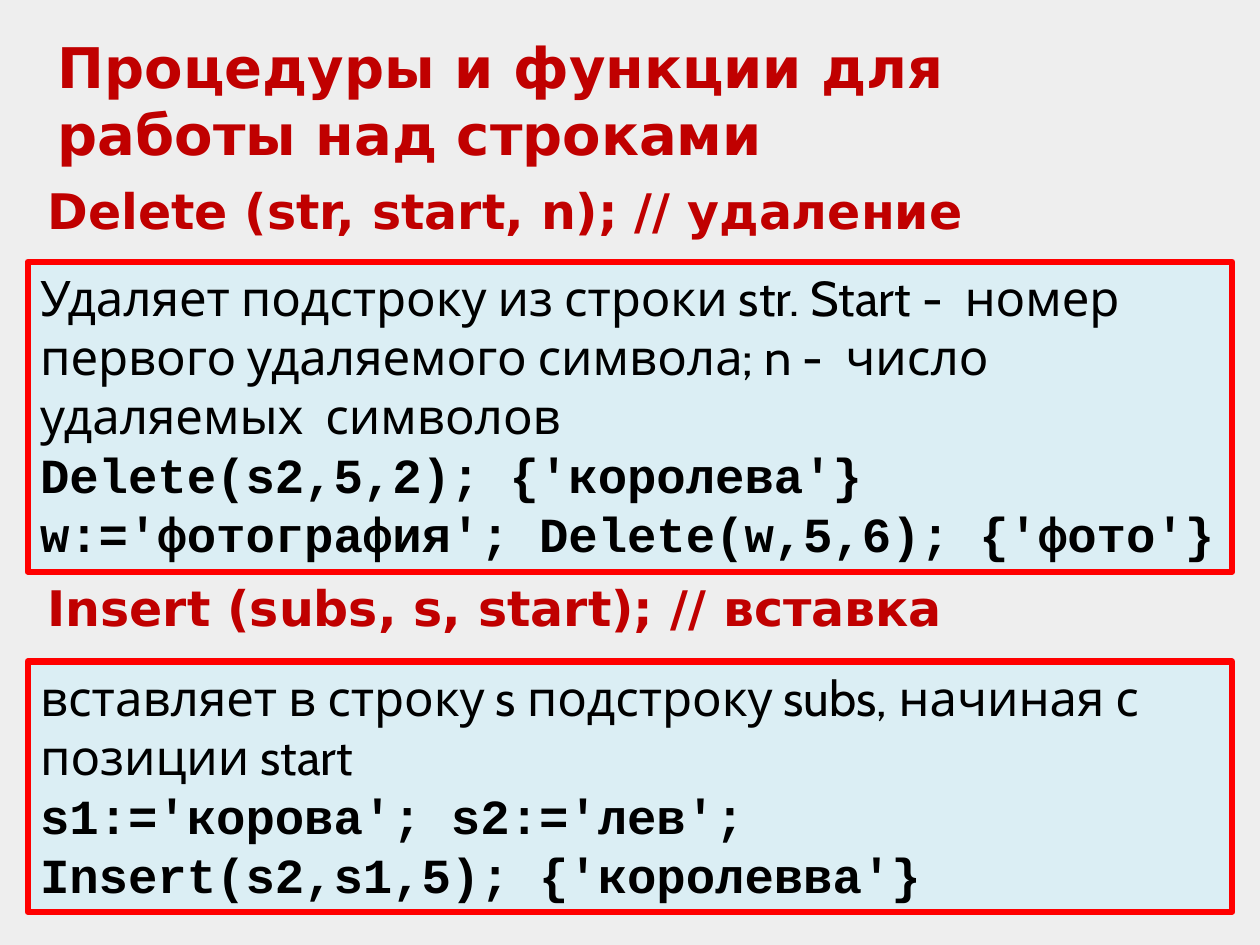
import pptx
import pptx.util
import pptx.dml.color
import pptx.enum.shapes
import pptx.enum.text

deck = pptx.Presentation()
deck.slide_width = pptx.util.Inches(10)
deck.slide_height = pptx.util.Inches(7.5)
wide, high = deck.slide_width, deck.slide_height
slide = deck.slides.add_slide(deck.slide_layouts[6])


def tint(code):
    return pptx.dml.color.RGBColor.from_string(code)


def write(shape, lines):
    """Fill a shape with (text, font, size, colour, bold) paragraphs."""
    frame = shape.text_frame
    frame.word_wrap = True
    frame.vertical_anchor = pptx.enum.text.MSO_ANCHOR.TOP
    frame.text = "\n".join(line[0] for line in lines)
    for para, (_, face, size, hue, bold) in zip(frame.paragraphs, lines):
        para.alignment = pptx.enum.text.PP_ALIGN.LEFT
        font = para.runs[0].font
        font.name = face
        font.size = pptx.util.Pt(size)
        font.bold = bold
        font.color.rgb = tint(hue)


back = slide.background.fill
back.solid()
back.fore_color.rgb = tint("EEEEEE")

# Vertical places are shares of the slide: head top, panel top, panel height
parts = [
    (0.184, 0.277, 0.328,
     "Delete (str, start, n); // удаление",
     "Удаляет подстроку из строки str. Start -  номер первого "
     "удаляемого символа; n -  число  удаляемых  символов",
     ["Delete(s2,5,2); {'королева'}",
      "w:='фотография'; Delete(w,5,6); {'фото'}"]),
    (0.605, 0.7, 0.265,
     "Insert (subs, s, start); // вставка",
     "вставляет в строку s подстроку subs, начиная с позиции start",
     ["s1:='корова'; s2:='лев';",
      "Insert(s2,s1,5); {'королевва'}"]),
]

heads = [(0.036, 0.028, 0.157, 32, "Процедуры и функции для работы над строками")]
heads += [(0.028, part[0], 0.076, 28, part[3]) for part in parts]
for left, top, tall, size, text in heads:
    box = slide.shapes.add_textbox(
        int(left * wide), int(top * high), int(0.928 * wide), int(tall * high))
    write(box, [(text, "DejaVu Sans", size, "C00000", True)])

for _, top, tall, _, about, code in parts:
    panel = slide.shapes.add_shape(
        pptx.enum.shapes.MSO_SHAPE.RECTANGLE,
        int(0.022 * wide), int(top * high), int(0.956 * wide), int(tall * high))
    panel.shadow.inherit = False
    panel.fill.solid()
    panel.fill.fore_color.rgb = tint("DBEEF4")
    panel.line.color.rgb = tint("FF0000")
    panel.line.width = pptx.util.Pt(3.5)
    lines = [(about, "Cabin", 28, "000000", False)]
    lines += [(row, "Courier New", 28, "000000", True) for row in code]
    write(panel, lines)

deck.save("out.pptx")
